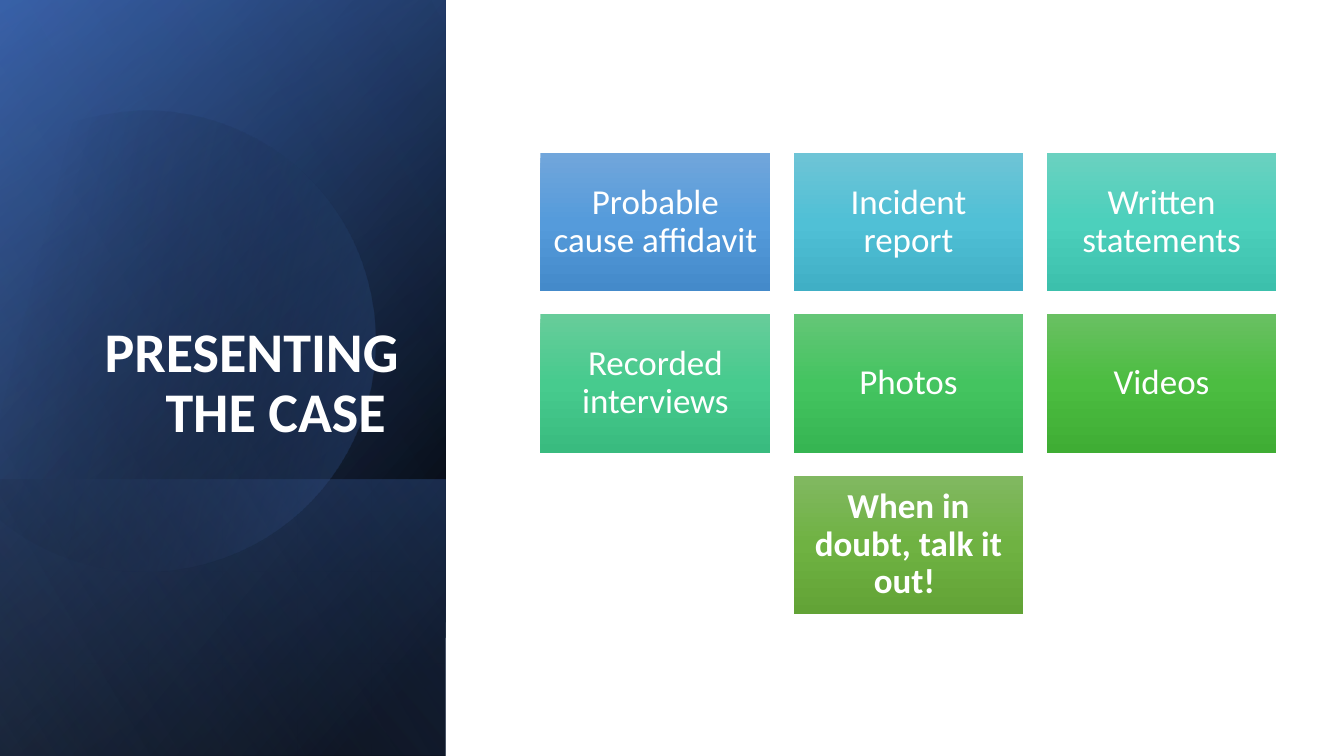
from dataclasses import dataclass
from math import cos, radians, sin

from pptx import Presentation
from pptx.dml.color import RGBColor
from pptx.enum.shapes import MSO_SHAPE as Shape
from pptx.enum.text import MSO_ANCHOR as Anchor, PP_ALIGN as Align
from pptx.oxml import parse_xml
from pptx.oxml.ns import nsdecls, qn
from pptx.util import Inches, Pt


@dataclass(frozen=True)
class Theme:
    font: str = "Calibri"
    text: str = "FFFFFF"
    title_size: int = 40
    tile_size: int = 25
    black: str = "000000"
    blue: str = "4472C4"
    deep_blue: str = "2F5597"
    pale_blue: str = "8FAADC"


THEME = Theme()
WIDTH, HEIGHT = 13.33, 7.5
PANEL_WIDTH = 4.42
BAND_TOP = 4.76
COLUMNS = 3
GRID_LEFT, GRID_TOP = 5.36, 1.52
TILE_WIDTH, TILE_HEIGHT, GAP = 2.28, 1.37, 0.23

PANEL_LAYERS = [
    (0, 50, [(8, THEME.black, 100), (100, THEME.deep_blue, 100)]),
    (0, 30, [(0, THEME.black, 0), (99, THEME.blue, 46)]),
    (BAND_TOP, 130, [(2, THEME.blue, 29), (100, THEME.black, 30)]),
]
SHEEN = (0, 120, [(0, THEME.black, 0), (99, THEME.pale_blue, 11)])

DISC_TURN = 343.9
DISC_CENTER = (1.59, 3.35)
DISC_START = (1.49, 1.1)
DISC_SEGMENTS = [
    [(2.46, 1.12), (3.35, 1.77), (3.63, 2.75)],
    [(3.98, 3.97), (3.28, 5.23), (2.07, 5.58)],
    [(1.31, 5.8), (0.53, 5.61), (-0.03, 5.14)],
    [(-0.15, 5.03)],
    [(-0.15, 1.75)],
    [(0, 1.61)],
    [(0.23, 1.42), (0.5, 1.28), (0.8, 1.19)],
    [(1.03, 1.13), (1.26, 1.1), (1.49, 1.1)],
]

TILES = [
    ("Probable cause affidavit", ("71A6DB", "559BDB", "448ACA"), False),
    ("Incident report", ("6EC4D6", "50C0D6", "40AFC5"), False),
    ("Written statements", ("6AD1C0", "4CD0BC", "3CC0AC"), False),
    ("Recorded interviews", ("67CC9A", "47CB8E", "39BB7F"), False),
    ("Photos", ("64C677", "44C460", "36B552"), False),
    ("Videos", ("69C062", "4CBD41", "3FAD34"), False),
    ("When in doubt, talk it out! ", ("81B861", "6FB242", "62A336"), True),
]


def paint_gradient(shape, stops, angle):
    shape.shadow.inherit = False
    shape.line.fill.background()
    shape.fill.background()
    stop_xml = "".join(
        f'<a:gs pos="{position * 1000}"><a:srgbClr val="{color}">'
        f'<a:alpha val="{opacity * 1000}"/></a:srgbClr></a:gs>'
        for position, color, opacity in stops
    )
    gradient = parse_xml(
        f'<a:gradFill {nsdecls("a")} rotWithShape="1"><a:gsLst>{stop_xml}</a:gsLst>'
        f'<a:lin ang="{angle * 60000}" scaled="0"/></a:gradFill>'
    )
    properties = shape.element.spPr
    properties.replace(properties.find(qn("a:noFill")), gradient)


def add_panel_layer(slide, top, angle, stops):
    length = HEIGHT - top
    left = (PANEL_WIDTH - length) / 2
    shape = slide.shapes.add_shape(
        Shape.RECTANGLE, Inches(left), Inches(top - left),
        Inches(length), Inches(PANEL_WIDTH),
    )
    shape.rotation = 90
    shape.element.spPr.find(qn("a:xfrm")).set("flipH", "1")
    paint_gradient(shape, stops, angle)


def bezier(points, share):
    while len(points) > 1:
        points = [
            tuple(a + (b - a) * share for a, b in zip(first, second))
            for first, second in zip(points, points[1:])
        ]
    return points[0]


def outline(start, segments, steps=24):
    points = [start]
    for segment in segments:
        curve = [points[-1], *segment]
        count = steps if len(segment) > 1 else 1
        points += [bezier(curve, step / count) for step in range(1, count + 1)]
    return points


def turn(point, center, degrees):
    angle = radians(degrees)
    across, down = point[0] - center[0], point[1] - center[1]
    return (
        Inches(center[0] + across * cos(angle) - down * sin(angle)),
        Inches(center[1] + across * sin(angle) + down * cos(angle)),
    )


def add_disc(slide):
    points = [
        turn(point, DISC_CENTER, -DISC_TURN)
        for point in outline(DISC_START, DISC_SEGMENTS)
    ]
    builder = slide.shapes.build_freeform(*points[0])
    builder.add_line_segments(points[1:], close=True)
    shape = builder.convert_to_shape()
    shape.rotation = DISC_TURN
    paint_gradient(shape, [(29, THEME.black, 0), (100, THEME.blue, 43)], 30)


def write_text(shape, text, size, bold, align, anchor):
    frame = shape.text_frame
    frame.word_wrap = True
    frame.vertical_anchor = anchor
    paragraph = frame.paragraphs[0]
    paragraph.alignment = align
    paragraph.line_spacing = 0.9
    run = paragraph.add_run()
    run.text = text
    run.font.name = THEME.font
    run.font.size = Pt(size)
    run.font.bold = bold
    run.font.color.rgb = RGBColor.from_string(THEME.text)


def add_title(slide):
    box = slide.shapes.add_textbox(
        Inches(0.64), Inches(1.84), Inches(3.41), Inches(2.62)
    )
    write_text(box, "PRESENTING THE CASE ", THEME.title_size, True,
               Align.RIGHT, Anchor.BOTTOM)


def add_tile(slide, column, row, text, colors, bold):
    shape = slide.shapes.add_shape(
        Shape.RECTANGLE,
        Inches(GRID_LEFT + column * (TILE_WIDTH + GAP)),
        Inches(GRID_TOP + row * (TILE_HEIGHT + GAP)),
        Inches(TILE_WIDTH), Inches(TILE_HEIGHT),
    )
    paint_gradient(shape, [(50 * i, color, 100) for i, color in enumerate(colors)], 90)
    frame = shape.text_frame
    frame.margin_left = frame.margin_right = Inches(0.1)
    frame.margin_top = frame.margin_bottom = Inches(0.1)
    write_text(shape, text, THEME.tile_size, bold, Align.CENTER, Anchor.MIDDLE)


def add_tile_grid(slide):
    for start in range(0, len(TILES), COLUMNS):
        row_tiles = TILES[start:start + COLUMNS]
        indent = (COLUMNS - len(row_tiles)) / 2
        for column, tile in enumerate(row_tiles):
            add_tile(slide, column + indent, start // COLUMNS, *tile)


def main():
    presentation = Presentation()
    presentation.slide_width = Inches(WIDTH)
    presentation.slide_height = Inches(HEIGHT)
    slide = presentation.slides.add_slide(presentation.slide_layouts[6])
    for layer in PANEL_LAYERS:
        add_panel_layer(slide, *layer)
    add_disc(slide)
    add_panel_layer(slide, *SHEEN)
    add_title(slide)
    add_tile_grid(slide)
    presentation.save("out.pptx")


if __name__ == "__main__":
    main()
